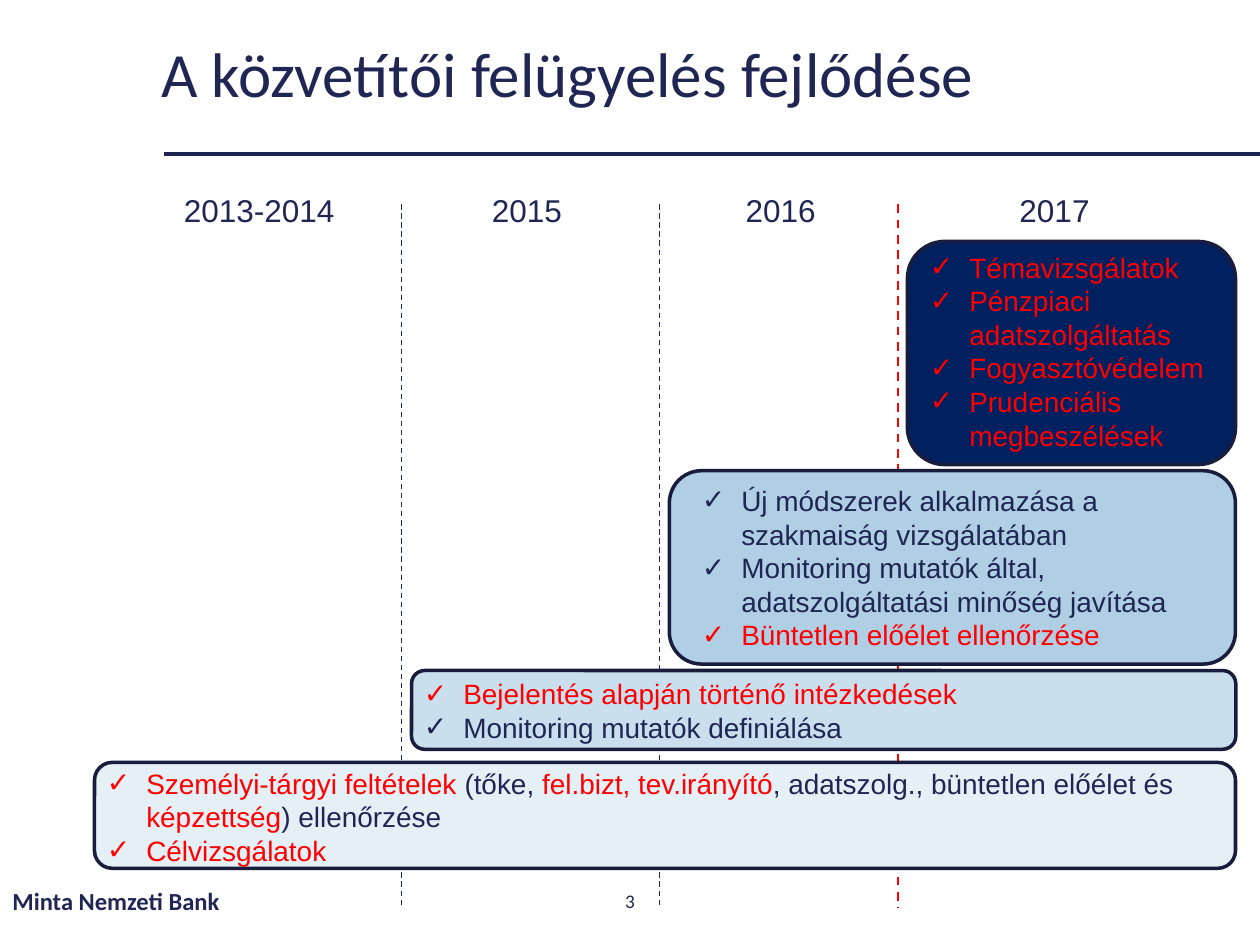
from dataclasses import dataclass

from lxml.etree import SubElement
from pptx import Presentation
from pptx.dml.color import RGBColor
from pptx.enum.dml import MSO_LINE
from pptx.enum.shapes import MSO_CONNECTOR, MSO_SHAPE
from pptx.enum.text import MSO_ANCHOR, PP_ALIGN
from pptx.oxml.ns import qn
from pptx.util import Pt

NAVY = "202653"
RED = "FF0000"
BORDER = "181C3D"
INDENT = 22.5

Span = tuple[str, str]  # wording, colour
Area = tuple[float, float, float, float]  # left, top, width, height


@dataclass
class Stage:
    """A rounded panel with its check list."""
    panel: Area
    text: Area
    fill: str
    items: list[list[Span]]


@dataclass
class Year:
    label: str
    left: float
    width: float


@dataclass
class Divider:
    x: float
    color: str
    width: float


YEARS = [
    Year("2013-2014", 98, 105),
    Year("2015", 274, 57),
    Year("2016", 419, 57),
    Year("2017", 575.5, 55),
]

DIVIDERS = [
    Divider(513.3, RED, 1.25),
    Divider(377, NAVY, 0.75),
    Divider(229.5, NAVY, 0.75),
]

STAGES = [
    Stage((518.5, 138, 187.5, 127.5), (524.3, 139.5, 181.5, 143.5), "002060", [
        [("Témavizsgálatok", RED)],
        [("Pénzpiaci adatszolgáltatás", RED)],
        [("Fogyasztóvédelem", RED)],
        [("Prudenciális megbeszélések", RED)],
    ]),
    Stage((382.5, 269, 323.5, 110.5), (394, 272.8, 312, 104.5), "B0CFE5", [
        [("Új módszerek alkalmazása a szakmaiság vizsgálatában", NAVY)],
        [("Monitoring mutatók által, adatszolgáltatási minőség javítása", NAVY)],
        [("Büntetlen előélet ellenőrzése", RED)],
    ]),
    Stage((235.2, 383.2, 471, 45), (235.2, 383.2, 471, 46), "CADFEE", [
        [("Bejelentés alapján történő intézkedések", RED)],
        [("Monitoring mutatók definiálása", NAVY)],
    ]),
    Stage((54, 435.7, 652, 60.5), (54, 434.3, 652, 65.5), "E5EFF6", [
        [("Személyi-tárgyi feltételek ", RED), ("(tőke, ", NAVY),
         ("fel.bizt, tev.irányító", RED),
         (", adatszolg., büntetlen előélet és ", NAVY),
         ("képzettség", RED), (") ellenőrzése", NAVY)],
        [("Célvizsgálatok", RED)],
    ]),
]


def color_of(value: str) -> RGBColor:
    return RGBColor.from_string(value)


def add_check_mark(para) -> None:
    properties = para._p.get_or_add_pPr()
    properties.set("marL", str(Pt(INDENT)))
    properties.set("indent", str(-Pt(INDENT)))
    SubElement(properties, qn("a:buFont"), typeface="Arial")
    SubElement(properties, qn("a:buChar"), char="✓")


def add_text(page, area: Area, paragraphs: list[list[Span]], *, size: float,
             font: str = "Arial", bold: bool = False, checked: bool = False,
             anchor=MSO_ANCHOR.TOP, align=PP_ALIGN.LEFT,
             spacing: float | None = None, wrap: bool = True) -> None:
    box = page.shapes.add_textbox(*map(Pt, area))
    frame = box.text_frame
    frame.word_wrap = wrap
    frame.vertical_anchor = anchor
    for index, spans in enumerate(paragraphs):
        para = frame.add_paragraph() if index else frame.paragraphs[0]
        para.alignment = align
        if spacing:
            para.line_spacing = spacing
        if checked:
            add_check_mark(para)
        for text, color in spans:
            span = para.add_run()
            span.text = text
            span.font.name = font
            span.font.size = Pt(size)
            span.font.bold = bold
            span.font.color.rgb = color_of(color)


def add_line(page, start: tuple[float, float], end: tuple[float, float], *,
             color: str, width: float, dashed: bool = False) -> None:
    line = page.shapes.add_connector(
        MSO_CONNECTOR.STRAIGHT, *map(Pt, start + end))
    line.line.color.rgb = color_of(color)
    line.line.width = Pt(width)
    if dashed:
        line.line.dash_style = MSO_LINE.DASH
    SubElement(line._element.spPr, qn("a:effectLst"))


def add_stage(page, stage: Stage) -> None:
    panel = page.shapes.add_shape(
        MSO_SHAPE.ROUNDED_RECTANGLE, *map(Pt, stage.panel))
    panel.shadow.inherit = False
    panel.fill.solid()
    panel.fill.fore_color.rgb = color_of(stage.fill)
    panel.line.color.rgb = color_of(BORDER)
    panel.line.width = Pt(2)
    add_text(page, stage.text, stage.items, size=16, checked=True)


def main() -> None:
    deck = Presentation()
    deck.slide_width, deck.slide_height = Pt(720), Pt(540)
    page = deck.slides.add_slide(deck.slide_layouts[6])

    # Title rule and year dividers
    add_line(page, (93.6, 88.2), (720, 88.2), color="1E2452", width=2.25)
    for divider in DIVIDERS:
        add_line(page, (divider.x, 116.8), (divider.x, 519),
                 color=divider.color, width=divider.width, dashed=True)

    # Title and footer
    add_text(page, (85, 14, 589.5, 60),
             [[("A közvetítői felügyelés fejlődése", NAVY)]], size=36,
             font="Calibri", anchor=MSO_ANCHOR.MIDDLE, spacing=0.9)
    add_text(page, (0, 500.2, 243.5, 29), [[("Minta Nemzeti Bank", NAVY)]],
             size=14, font="Calibri", bold=True, anchor=MSO_ANCHOR.MIDDLE)
    add_text(page, (279, 500.2, 162, 29), [[("3", NAVY)]], size=11,
             font="Calibri", anchor=MSO_ANCHOR.MIDDLE, align=PP_ALIGN.CENTER)

    # Year headings
    for year in YEARS:
        add_text(page, (year.left, 105.7, year.width, 29),
                 [[(year.label, NAVY)]], size=18, wrap=False)

    # Stages, latest first
    for stage in STAGES:
        add_stage(page, stage)

    deck.save("out.pptx")


if __name__ == "__main__":
    main()
